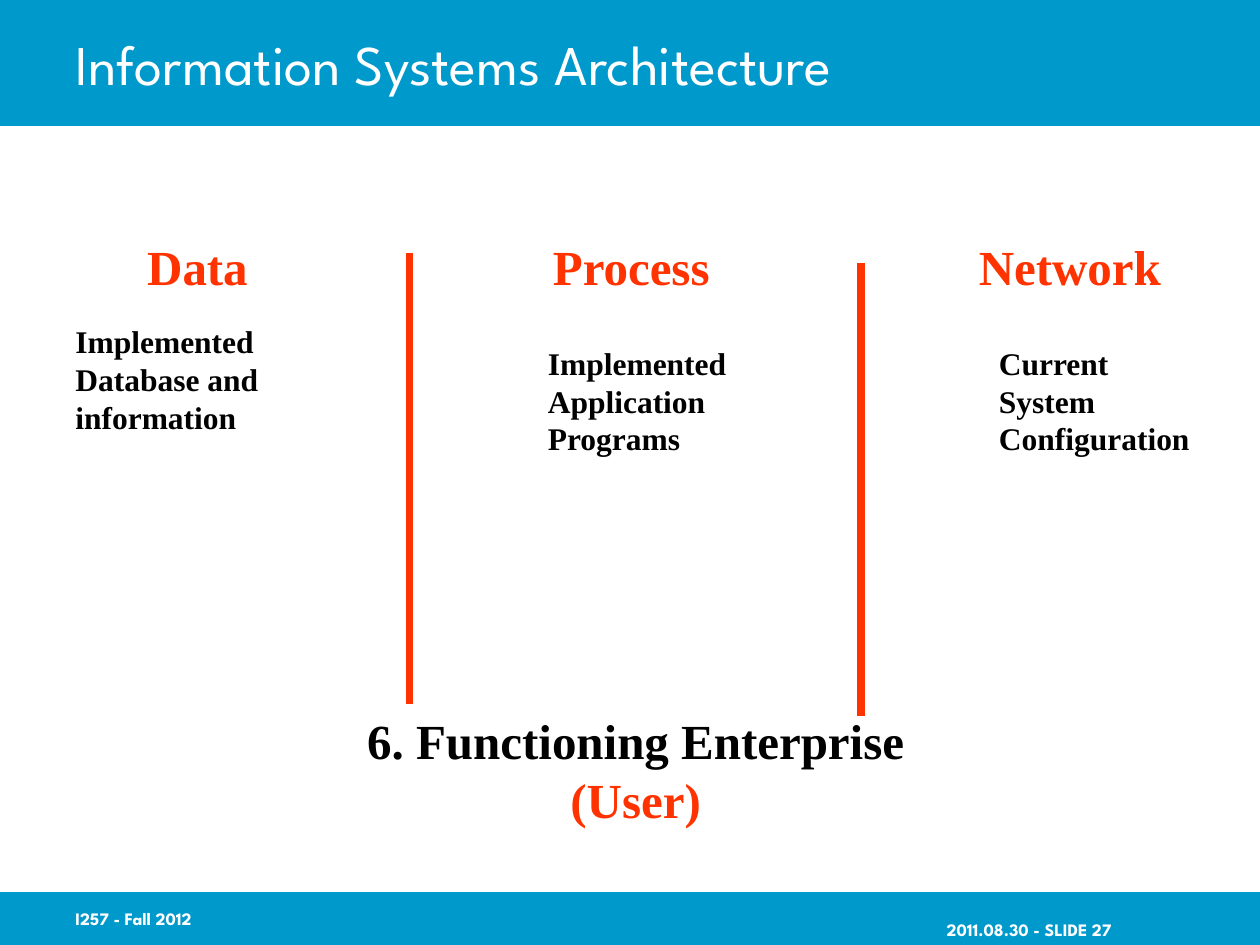
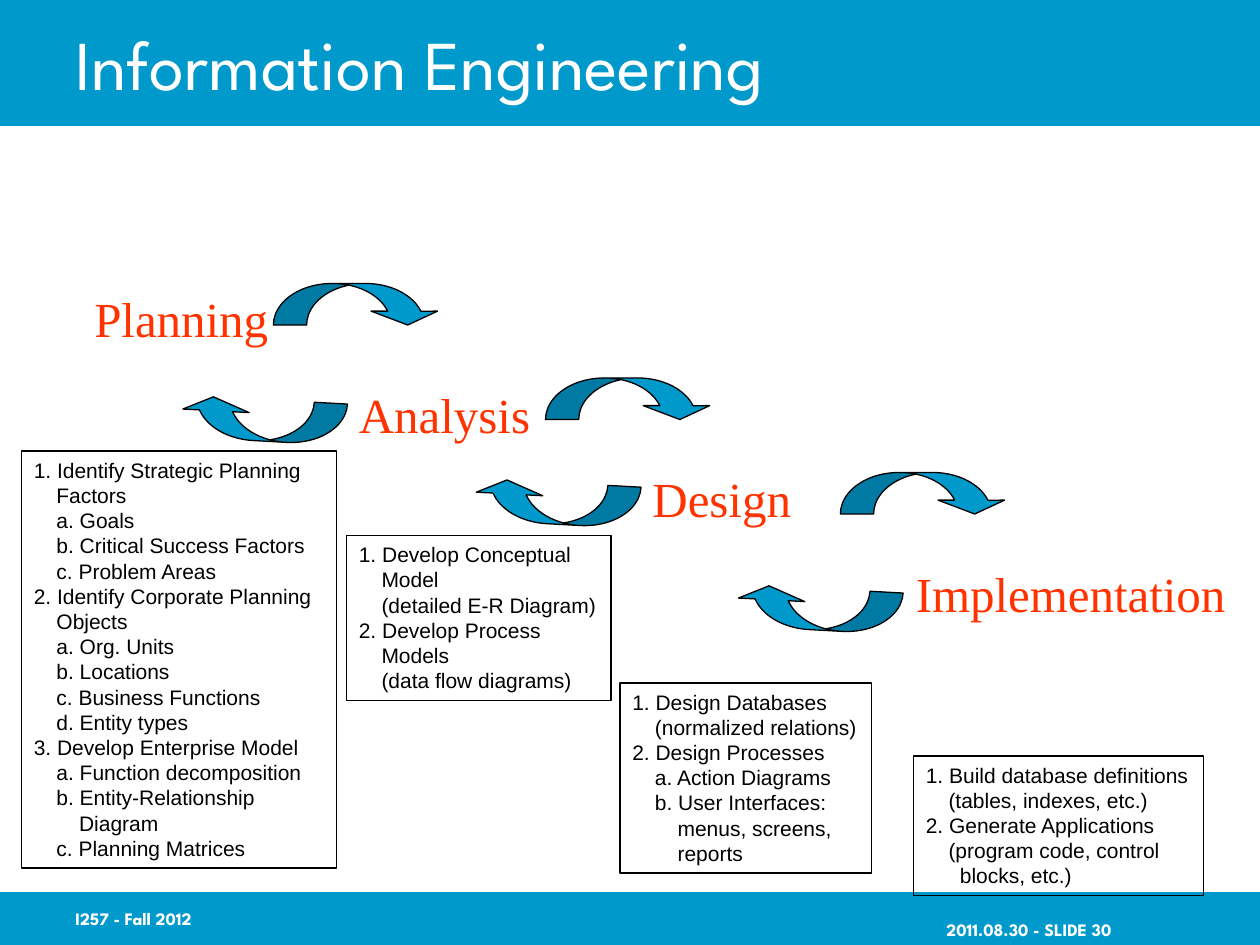
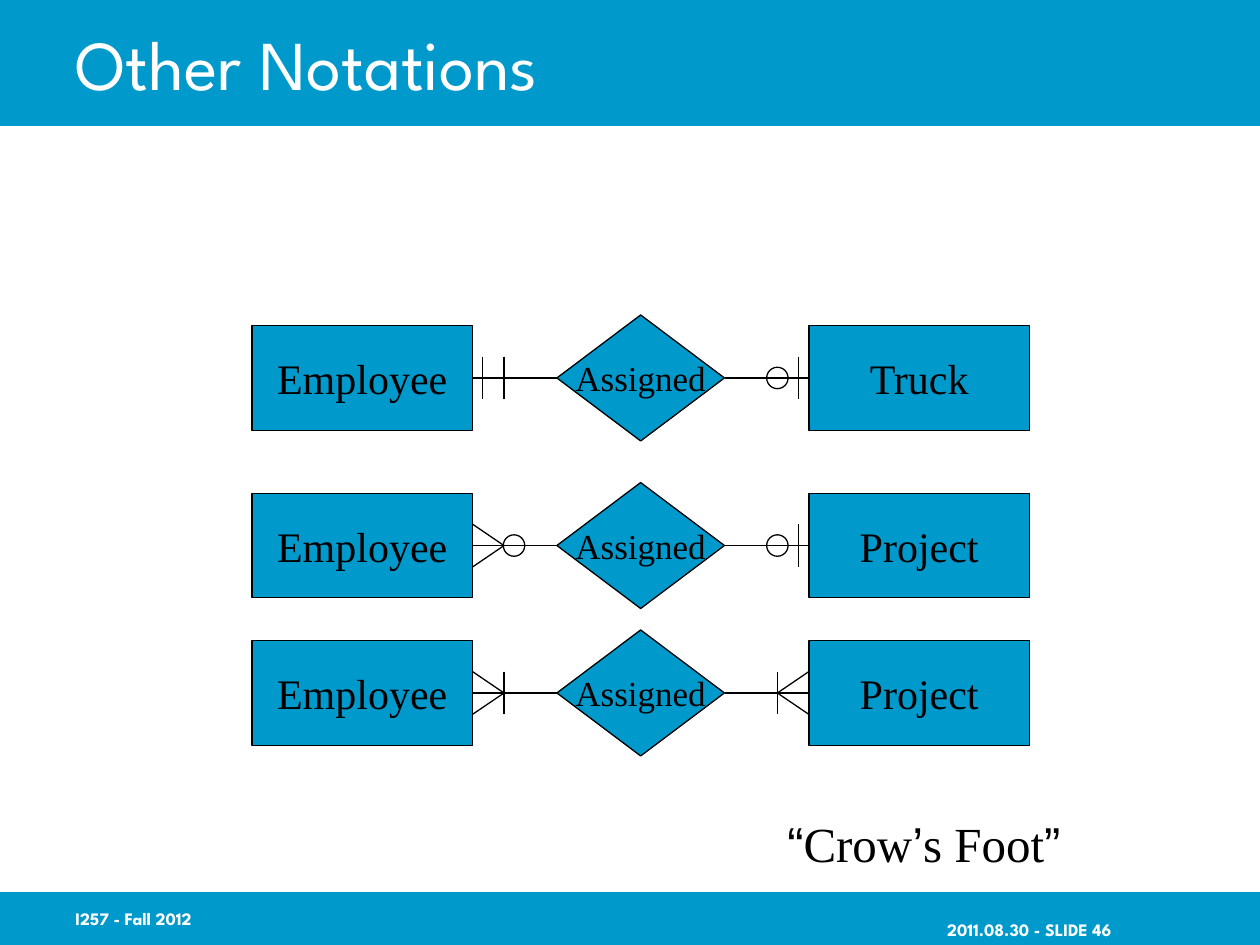
from pptx import Presentation
from pptx.dml.color import RGBColor
from pptx.enum.shapes import MSO_CONNECTOR, MSO_SHAPE
from pptx.enum.text import MSO_ANCHOR, MSO_AUTO_SIZE, PP_ALIGN
from pptx.oxml.ns import qn
from pptx.util import Inches, Pt

STRAIGHT = MSO_CONNECTOR.STRAIGHT
RECTANGLE = MSO_SHAPE.RECTANGLE
DIAMOND = MSO_SHAPE.FLOWCHART_DECISION
OVAL = MSO_SHAPE.OVAL
CURVED_ARROW = MSO_SHAPE.CURVED_DOWN_ARROW
TOP, MIDDLE = MSO_ANCHOR.TOP, MSO_ANCHOR.MIDDLE
LEFT, CENTER, RIGHT = PP_ALIGN.LEFT, PP_ALIGN.CENTER, PP_ALIGN.RIGHT
TITLE_ONLY = 5

COLORS = {"band": "0099CC", "accent": "FF3300", "ink": "000000", "paper": "FFFFFF"}
SERIF, SANS, DISPLAY = "Times New Roman", "Arial", "League Spartan"
HEADING = {"name": SERIF, "size": 28, "color": "accent"}
BOLD_HEADING = {**HEADING, "bold": True}
BOLD_BODY = {"name": SERIF, "size": 18, "color": "ink", "bold": True}
LIST_TEXT = {"name": SANS, "size": 12, "color": "ink"}
FOOTER_TEXT = {"name": DISPLAY, "size": 10, "color": "paper", "bold": True}
INDENT = 0.18

ARCHITECTURE_COLUMNS = [
    # heading, heading left, body left, body top, body lines
    ("Data", 1.07, 0.5, 2.51, ["Implemented", "Database and", "information"]),
    ("Process", 4.29, 4.25, 2.68, ["Implemented", "Application", "Programs"]),
    ("Network", 7.67, 7.83, 2.68, ["Current", "System", "Configuration"]),
]

STAGES = [
    # name, its place, box of tasks, (depth, line) of each task line
    ("Planning", (0.65, 2.24), (0.17, 3.58, 2.5, 3.31), [
        (0, "1. Identify Strategic Planning"), (1, "Factors"),
        (1, "a. Goals"), (1, "b. Critical Success Factors"), (1, "c. Problem Areas"),
        (0, "2. Identify Corporate Planning"), (1, "Objects"),
        (1, "a. Org. Units"), (1, "b. Locations"),
        (1, "c. Business Functions"), (1, "d. Entity types"),
        (0, "3. Develop Enterprise Model"), (1, "a. Function decomposition"),
        (1, "b. Entity-Relationship"), (2, "Diagram"), (1, "c. Planning Matrices")]),
    ("Analysis", (2.75, 3), (2.75, 4.25, 2.1, 1.31), [
        (0, "1. Develop Conceptual"), (1, "Model"), (1, "(detailed E-R Diagram)"),
        (0, "2. Develop Process"), (1, "Models"), (1, "(data flow diagrams)")]),
    ("Design", (5.08, 3.67), (4.92, 5.42, 2, 1.51), [
        (0, "1. Design Databases"), (1, "(normalized relations)"),
        (0, "2. Design Processes"), (1, "a. Action Diagrams"),
        (1, "b. User Interfaces:"), (2, "menus, screens,"), (2, "reports")]),
    ("Implementation", (7.17, 4.42), (7.25, 6, 2.3, 1.11), [
        (0, "1. Build database definitions"), (1, "(tables, indexes, etc.)"),
        (0, "2. Generate Applications"), (1, "(program code, control"),
        (1.5, "blocks, etc.)")]),
]
FORWARD_ARROWS = [(2.17, 2.25), (4.33, 3), (6.67, 3.75)]
BACKWARD_ARROWS = [(1.42, 3.17), (3.75, 3.83), (5.83, 4.67)]

RELATIONSHIPS = [
    # centre height, right entity, marks (kind, distance from entity) at each end
    (3, "Truck", [("bar", 0.08), ("bar", 0.25)], [("bar", 0.08), ("circle", 0.25)]),
    (4.33, "Project", [("foot", 0.25), ("circle", 0.33)], [("bar", 0.08), ("circle", 0.25)]),
    (5.5, "Project", [("foot", 0.25), ("bar", 0.25)], [("foot", 0.25), ("bar", 0.25)]),
]


def rgb(color):
    return RGBColor.from_string(COLORS[color])


def inches(lengths):
    return [Inches(length) for length in lengths]


def format_font(font, values):
    for name, value in values.items():
        if name == "color":
            font.color.rgb = rgb(value)
        else:
            setattr(font, name, Pt(value) if name == "size" else value)


def write(frame, paragraphs, font, align=LEFT, anchor=TOP, wrap=True, margins=None):
    """Fill a frame; a paragraph is a string or a list of (text, font changes)."""
    settings = {"auto_size": MSO_AUTO_SIZE.NONE, "word_wrap": wrap,
                "vertical_anchor": anchor}
    for side, margin in (margins or {}).items():
        settings["margin_" + side] = Inches(margin)
    for name, value in settings.items():
        setattr(frame, name, value)
    for index, content in enumerate(paragraphs):
        paragraph = frame.add_paragraph() if index else frame.paragraphs[0]
        paragraph.alignment = align
        pieces = [(content, {})] if isinstance(content, str) else content
        for text, changes in pieces:
            run = paragraph.add_run()
            run.text = text
            format_font(run.font, {**font, **changes})


def add_text(slide, at, paragraphs, font, **layout):
    box = slide.shapes.add_textbox(*inches(at))
    write(box.text_frame, paragraphs, font, **layout)
    return box


def add_figure(slide, kind, at, fill="band", line="ink"):
    shape = slide.shapes.add_shape(kind, *inches(at))
    shape.shadow.inherit = False
    if fill:
        shape.fill.solid()
        shape.fill.fore_color.rgb = rgb(fill)
    else:
        shape.fill.background()
    if line:
        shape.line.color.rgb = rgb(line)
        shape.line.width = Pt(0.75)
    else:
        shape.line.fill.background()
    return shape


def add_line(slide, start, end, color="ink", width=0.75):
    line = slide.shapes.add_connector(STRAIGHT, *inches((*start, *end)))
    line.line.color.rgb = rgb(color)
    line.line.width = Pt(width)
    properties = line.element.spPr
    properties.append(properties.makeelement(qn("a:effectLst"), {}))
    return line


def add_bands_to_master(presentation, slide):
    """Draw the bands on a slide, then move them behind all master content."""
    master_tree = presentation.slide_master.shapes.element
    for top, height in ((0, 1), (7.08, 0.42)):
        band = add_figure(slide, RECTANGLE, (0, top, 10, height), line=None)
        master_tree.insert(2, band.element)


def add_slide(presentation, title, number, title_size=40):
    slide = presentation.slides.add_slide(presentation.slide_layouts[TITLE_ONLY])
    placeholder = slide.shapes.title
    bounds = inches((0.5, 0, 8.5, 1))
    for name, length in zip(("left", "top", "width", "height"), bounds):
        setattr(placeholder, name, length)
    write(placeholder.text_frame, [title],
          {"name": DISPLAY, "size": title_size, "color": "paper"}, anchor=MIDDLE)
    add_text(slide, (0.5, 7.08, 2.08, 0.42), ["I257 - Fall 2012"], FOOTER_TEXT,
             anchor=MIDDLE)
    add_text(slide, (6.82, 7.17, 2, 0.42), [f"2011.08.30 - SLIDE {number}"],
             FOOTER_TEXT, align=RIGHT, anchor=MIDDLE, margins={"right": 0})
    return slide


def add_task_list(slide, at, tasks):
    box = add_figure(slide, RECTANGLE, at, fill=None)
    write(box.text_frame, [text for _, text in tasks], LIST_TEXT, margins={"right": 0})
    for paragraph, (depth, _) in zip(box.text_frame.paragraphs, tasks):
        paragraph._p.get_or_add_pPr().set("marL", str(Inches(depth * INDENT)))


def add_curved_arrow(slide, left, top, rotation=0):
    arrow = add_figure(slide, CURVED_ARROW, (left, top, 1.33, 0.33))
    for index, value in enumerate((0.8, 1.6, 0.333)):
        arrow.adjustments[index] = value
    arrow.rotation = rotation


def add_node(slide, kind, left, middle, width, height, text, size):
    node = add_figure(slide, kind, (left, middle - height / 2, width, height))
    write(node.text_frame, [text], {"name": SERIF, "size": size, "color": "ink"},
          align=CENTER, anchor=MIDDLE, wrap=False)
    return node


def add_mark(slide, kind, edge, x, y):
    """Draw a cardinality mark at x on the line that leaves an entity at edge."""
    reach = 0.17
    if kind == "circle":
        add_figure(slide, OVAL, (x - reach / 2, y - reach / 2, reach, reach), fill=None)
    elif kind == "bar":
        add_line(slide, (x, y - reach), (x, y + reach))
    else:
        for offset in (-reach, reach):
            add_line(slide, (edge, y + offset), (x, y))


def add_relationship(slide, middle, right_name, left_marks, right_marks):
    left_edge, right_edge = 3.75, 6.42
    right = add_node(slide, RECTANGLE, right_edge, middle, 1.75, 0.83, right_name, 24)
    diamond = add_node(slide, DIAMOND, 4.42, middle, 1.33, 1, "Assigned", 20)
    left = add_node(slide, RECTANGLE, 2, middle, 1.75, 0.83, "Employee", 24)
    for source, target in ((left, diamond), (diamond, right)):
        link = add_line(slide, (left_edge, middle), (right_edge, middle))
        link.begin_connect(source, 3)
        link.end_connect(target, 1)
    for edge, direction, marks in ((left_edge, 1, left_marks), (right_edge, -1, right_marks)):
        for kind, distance in marks:
            add_mark(slide, kind, edge, edge + direction * distance, middle)


def fill_architecture(slide):
    for heading, heading_left, body_left, body_top, lines in ARCHITECTURE_COLUMNS:
        add_text(slide, (heading_left, 1.83, 1.8, 0.57), [heading], BOLD_HEADING)
        add_text(slide, (body_left, body_top, 1.9, 1), lines, BOLD_BODY)
    add_text(slide, (2.81, 5.59, 4.47, 1.03),
             [[("6. Functioning Enterprise", {"color": "ink"})], "(User)"],
             BOLD_HEADING, align=CENTER, wrap=False)
    for x, top, bottom in ((3.25, 2.01, 5.59), (6.83, 2.09, 5.68)):
        add_line(slide, (x, top), (x, bottom), "accent", 4.5)


def fill_engineering(slide):
    for name, place, _, _ in STAGES:
        add_text(slide, (*place, 2.8, 0.57), [name], HEADING)
    for left, top in FORWARD_ARROWS:
        add_curved_arrow(slide, left, top)
    for left, top in BACKWARD_ARROWS:
        add_curved_arrow(slide, left, top, 183.1)
    for _, _, box, tasks in STAGES:
        add_task_list(slide, box, tasks)


def fill_notations(slide):
    for relationship in RELATIONSHIPS:
        add_relationship(slide, *relationship)
    quote = {"name": SANS}
    add_text(slide, (6.15, 6.41, 2.5, 0.57),
             [[("“", quote), ("Crow", {}), ("’", quote), ("s Foot", {}), ("”", quote)]],
             {**HEADING, "color": "ink"})


def main():
    presentation = Presentation()
    presentation.slide_width = Inches(10)
    presentation.slide_height = Inches(7.5)
    architecture = add_slide(presentation, "Information Systems Architecture", 27, 32)
    add_bands_to_master(presentation, architecture)
    fill_architecture(architecture)
    fill_engineering(add_slide(presentation, "Information Engineering", 30))
    fill_notations(add_slide(presentation, "Other Notations", 46))
    presentation.save("out.pptx")


if __name__ == "__main__":
    main()
